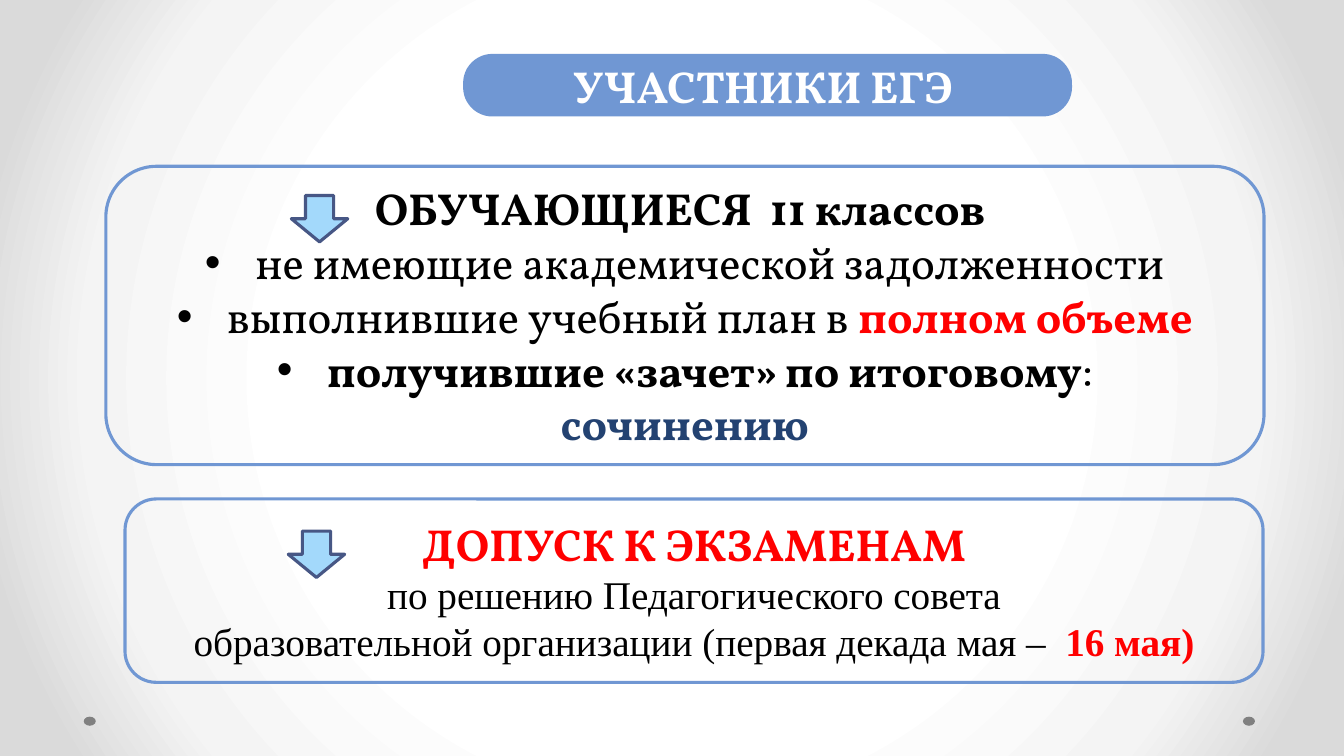
import pptx
import pptx.util
import pptx.dml.color
import pptx.enum.shapes
import pptx.enum.text
import pptx.oxml
import pptx.oxml.ns

Pt = pptx.util.Pt
RGBColor = pptx.dml.color.RGBColor
SHAPES = pptx.enum.shapes.MSO_SHAPE

WHITE = RGBColor(0xFF, 0xFF, 0xFF)
BLACK = RGBColor(0x00, 0x00, 0x00)
RED = RGBColor(0xFF, 0x00, 0x00)
NAVY = RGBColor(0x23, 0x42, 0x71)
BLUE = RGBColor(0x70, 0x97, 0xD3)
SKY = RGBColor(0xA3, 0xD9, 0xFB)
INDIGO = RGBColor(0x47, 0x57, 0x85)
GRAY = RGBColor(0x80, 0x80, 0x80)
BACKDROP = [(50, "FFFFFF"), (76, "F4F4F4"), (92, "DADADA")]

HEAD = {"name": "Vollkorn", "size": Pt(32), "bold": True}
BODY = {**HEAD, "bold": False}
NOTE = {"name": "Times New Roman", "size": Pt(28), "bold": False}
NOTE_BOLD = {**NOTE, "bold": True}


def add_figure(kind, frame, fill=None, line=None):
    """Add a shadowless preset shape; frame is left, top, width, height in points."""
    shape = page.shapes.add_shape(kind, *[Pt(length) for length in frame])
    shape.shadow.inherit = False
    if fill is None:
        shape.fill.background()
    else:
        shape.fill.solid()
        shape.fill.fore_color.rgb = fill
    if line is None:
        shape.line.fill.background()
    else:
        shape.line.color.rgb = line
        shape.line.width = Pt(2.25)
    return shape


def add_bullet(para):
    properties = para._p.get_or_add_pPr()
    properties.set("marL", str(Pt(36)))
    properties.set("indent", str(Pt(-36)))
    for tag, name, value in [("a:buFont", "typeface", "Arial"), ("a:buChar", "char", "•")]:
        element = pptx.oxml.ns.qn(tag)
        properties.append(properties.makeelement(element, {name: value}))


deck = pptx.Presentation()
deck.slide_width, deck.slide_height = Pt(960), Pt(540)
page = deck.slides.add_slide(deck.slide_layouts[6])

# Radial backdrop, white in the middle
page.background.fill.gradient()
gradient = page.background._cSld.bg.bgPr[0]
stops = "".join(
    f'<a:gs pos="{percent * 1000}"><a:srgbClr val="{color}"/></a:gs>'
    for percent, color in BACKDROP
)
radial = pptx.oxml.parse_xml(
    f'<a:gradFill {pptx.oxml.ns.nsdecls("a")} rotWithShape="1"><a:gsLst>{stops}</a:gsLst>'
    '<a:path path="circle"><a:fillToRect l="50000" t="50000" r="50000" b="50000"/></a:path>'
    "</a:gradFill>"
)
gradient.getparent().replace(gradient, radial)

for left in (887.8, 59.8):
    add_figure(SHAPES.OVAL, (left, 511.9, 8.6, 6.5), fill=GRAY)

# Each panel: frame, fill, corner, paragraphs as (bulleted, spans)
panels = [
    ((331.9, 39.6, 432.7, 42.5), BLUE, 0.465, [
        (False, [("УЧАСТНИКИ ЕГЭ ", HEAD, WHITE)]),
    ]),
    ((75.6, 118.8, 827.3, 213.1), None, 0.17, [
        (False, [("ОБУЧАЮЩИЕСЯ  11 классов ", HEAD, BLACK)]),
        (True, [("не имеющие академической задолженности", BODY, BLACK)]),
        (True, [("выполнившие учебный план в ", BODY, BLACK), ("полном объеме", HEAD, RED)]),
        (True, [("получившие «зачет» по итоговому", HEAD, BLACK), (":", BODY, BLACK)]),
        (False, [("сочинению", HEAD, NAVY)]),
    ]),
    ((89.3, 356.4, 812.9, 131), None, 0.17, [
        (False, [("ДОПУСК К ЭКЗАМЕНАМ", HEAD, RED)]),
        (False, [("по решению Педагогического совета", NOTE, BLACK)]),
        (False, [("образовательной организации (первая декада мая – ", NOTE, BLACK),
                 (" 16 мая)", NOTE_BOLD, RED)]),
    ]),
]
for frame, fill, corner, paragraphs in panels:
    panel = add_figure(SHAPES.ROUNDED_RECTANGLE, frame, fill, BLUE)
    panel.adjustments[0] = corner
    box = panel.text_frame
    box.word_wrap = True
    box.vertical_anchor = pptx.enum.text.MSO_ANCHOR.MIDDLE
    for index, (bulleted, spans) in enumerate(paragraphs):
        para = box.add_paragraph() if index else box.paragraphs[0]
        para.alignment = pptx.enum.text.PP_ALIGN.CENTER
        if bulleted:
            add_bullet(para)
        for text, style, color in spans:
            span = para.add_run()
            span.text = text
            span.font.color.rgb = color
            for name, value in style.items():
                setattr(span.font, name, value)

for left, top in [(211.7, 136.1), (209.5, 375.8)]:
    arrow = add_figure(SHAPES.RIGHT_ARROW, (left, top, 33.1, 40.3), SKY, INDIGO)
    arrow.rotation = 90

deck.save("out.pptx")
